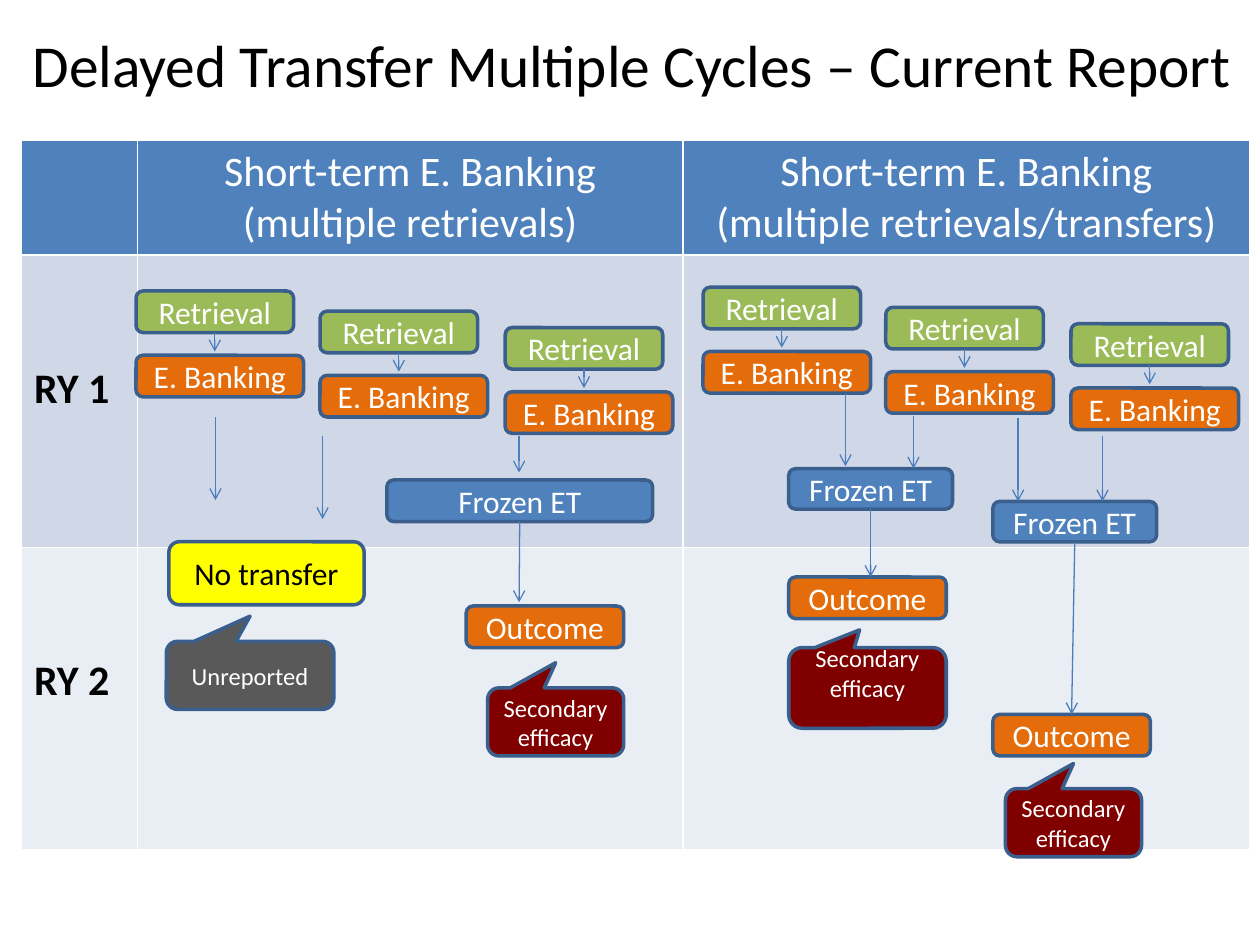
"""Build the slide on delayed transfer over multiple cycles."""
from pptx import Presentation
from pptx.dml.color import RGBColor
from pptx.enum.shapes import MSO_CONNECTOR, MSO_SHAPE
from pptx.enum.text import MSO_ANCHOR, MSO_AUTO_SIZE, PP_ALIGN
from pptx.oxml.ns import qn
from pptx.util import Inches, Pt
from lxml.etree import SubElement

color = RGBColor.from_string
BLUE, GREEN, ORANGE, MAROON = "4F81BD", "9BBB59", "E46C0A", "800000"
ROUNDED, CALLOUT = MSO_SHAPE.ROUNDED_RECTANGLE, MSO_SHAPE.ROUNDED_RECTANGULAR_CALLOUT

deck = Presentation()
deck.slide_width, deck.slide_height = Inches(10), Inches(7.5)
slide = deck.slides.add_slide(deck.slide_layouts[5])


def add_box(text, place, fill, kind=ROUNDED, size=18, ink="FFFFFF"):
    """Add an outlined, filled box with centred text."""
    box = slide.shapes.add_shape(kind, *[Inches(length) for length in place])
    box.shadow.inherit = False
    box.fill.solid()
    box.fill.fore_color.rgb = color(fill)
    box.line.color.rgb = color("3A5F8C")
    box.line.width = Pt(2)
    frame = box.text_frame
    frame.word_wrap = True
    frame.vertical_anchor = MSO_ANCHOR.MIDDLE
    frame.text = text
    para = frame.paragraphs[0]
    para.alignment = PP_ALIGN.CENTER
    para.font.name, para.font.size = "Calibri", Pt(size)
    para.font.color.rgb = color(ink)
    return box


def add_arrow(start, end, source=None, target=None):
    """Add a thin arrow, joined to the bottom of source and the top of target."""
    arrow = slide.shapes.add_connector(
        MSO_CONNECTOR.STRAIGHT, *[Inches(length) for length in (*start, *end)])
    if source is not None:
        arrow.begin_connect(source, 2)
    if target is not None:
        arrow.end_connect(target, 0)
    arrow.line.color.rgb = color("4B7EBC")
    arrow.line.width = Pt(0.75)
    SubElement(arrow.line._get_or_add_ln(), qn("a:tailEnd"), type="arrow")
    SubElement(arrow._element.spPr, qn("a:effectLst"))


title = slide.shapes.title
title.left, title.top = Inches(0.03), Inches(0.17)
title.width, title.height = Inches(9.97), Inches(0.92)
title.text_frame.text = "Delayed Transfer Multiple Cycles – Current Report"
title.text_frame.auto_size = MSO_AUTO_SIZE.NONE
title.text_frame.vertical_anchor = MSO_ANCHOR.TOP
title_para = title.text_frame.paragraphs[0]
title_para.alignment = PP_ALIGN.CENTER
title_para.font.name, title_para.font.size = "Calibri", Pt(34)
title_para.font.color.rgb = color("000000")

rows = [
    (0.9, BLUE, ["", "Short-term E. Banking\n(multiple retrievals)",
                 "Short-term E. Banking\n(multiple retrievals/transfers)"]),
    (2.32, "D0D8E8", ["RY 1", "", ""]),
    (2.4, "E9EDF4", ["RY 2", "", ""]),
]
table = slide.shapes.add_table(
    3, 3, Inches(0.17), Inches(1.11), Inches(9.75), Inches(5.62)).table
for column, width in zip(table.columns, (0.92, 4.33, 4.5)):
    column.width = Inches(width)
for row_index, (height, fill, texts) in enumerate(rows):
    table.rows[row_index].height = Inches(height)
    header = row_index == 0
    for column_index, text in enumerate(texts):
        cell = table.cell(row_index, column_index)
        cell.fill.solid()
        cell.fill.fore_color.rgb = color(fill)
        cell.text = text
        if not header:
            cell.margin_top = Inches(0.86)
        for para in cell.text_frame.paragraphs:
            para.alignment = PP_ALIGN.CENTER if header else PP_ALIGN.LEFT
            para.font.name, para.font.size = "Calibri", Pt(24)
            para.font.bold = not header
            para.font.color.rgb = color("FFFFFF" if header else "000000")

cycles = [(1.08, 2.31), (2.54, 2.47), (4.01, 2.6), (5.58, 2.28), (7.03, 2.44), (8.5, 2.57)]
for left, top in cycles:
    retrieval = add_box("Retrieval", (left, top, 1.25, 0.33), GREEN)
    add_box("E. Banking", (left, top + 0.51, 1.33, 0.33), ORANGE)
    middle = left + 0.625
    add_arrow((middle, top + 0.33), (middle, top + 0.48), retrieval)

frozen_wide, frozen_early, frozen_late = [
    add_box("Frozen ET", place, BLUE)
    for place in [(3.07, 3.81, 2.11, 0.33), (6.26, 3.72, 1.3, 0.32), (7.88, 3.98, 1.3, 0.32)]]
outcome_wide, outcome_early, outcome_late = [
    add_box("Outcome", (left, top, 1.25, 0.33), ORANGE)
    for left, top in [(3.7, 4.81), (6.26, 4.58), (7.88, 5.67)]]
add_box("No transfer", (1.34, 4.3, 1.55, 0.5), "FFFF00", ink="000000")

loose_arrows = [
    ((1.71, 3.31), (1.71, 3.97)), ((2.56, 3.46), (2.56, 4.12)),
    ((4.12, 3.46), (4.12, 3.75)), ((6.71, 3.12), (6.71, 3.7)),
    ((7.25, 3.3), (7.25, 3.72)), ((8.08, 3.32), (8.08, 3.98)),
    ((8.75, 3.46), (8.75, 3.98)),
]
for start, end in loose_arrows:
    add_arrow(start, end)
add_arrow((4.12, 4.14), (4.12, 4.78), frozen_wide)
add_arrow((6.91, 4.04), (6.91, 4.58), frozen_early)
add_arrow((8.53, 4.3), (8.5, 5.67), frozen_late, outcome_late)

callouts = [
    ("Secondary efficacy", (3.87, 5.46, 1.08, 0.54), MAROON, (0, -0.87), 0.05),
    ("Secondary efficacy", (7.98, 6.26, 1.08, 0.54), MAROON, (0, -0.87), 0.05),
    ("Secondary efficacy", (6.26, 5.14, 1.25, 0.64), MAROON, (-0.05, -0.72), 0.29),
    ("Unreported", (1.32, 5.09, 1.33, 0.54), "595959", (0, -0.87), 0.05),
]
for text, place, fill, tip, bottom_margin in callouts:
    callout = add_box(text, place, fill, CALLOUT, 14)
    callout.adjustments[0], callout.adjustments[1] = tip
    callout.text_frame.margin_bottom = Inches(bottom_margin)

deck.save("out.pptx")
